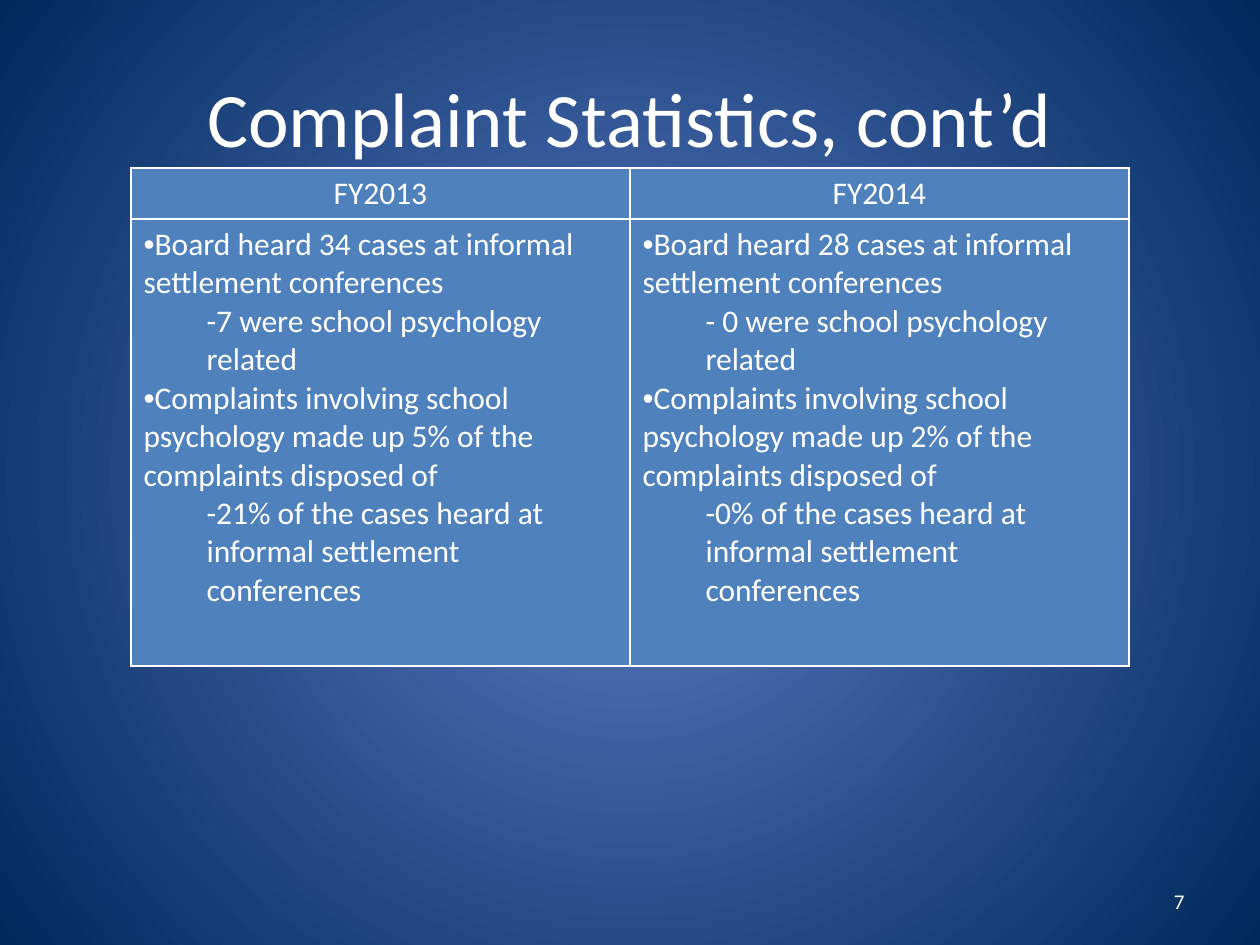
from lxml.etree import SubElement
from pptx import Presentation
from pptx.dml.color import RGBColor
from pptx.enum.text import MSO_ANCHOR as Anchor, PP_ALIGN as Align
from pptx.oxml.ns import qn
from pptx.util import Pt

EMU_PER_PX = 914400 / 126
FONT = "Calibri"
COLORS = {"text": "FFFFFF", "cell": "4F81BD", "center": "5E7CC5", "edge": "00295C"}

# (fiscal year, [(indent level, text), ...])
YEARS = [
    ("FY2013", [
        (0, "Board heard 34 cases at informal settlement conferences"),
        (1, "-7 were school psychology related"),
        (0, "Complaints involving school psychology made up 5% of the complaints disposed of"),
        (1, "-21% of the cases heard at informal settlement conferences"),
    ]),
    ("FY2014", [
        (0, "Board heard 28 cases at informal settlement conferences"),
        (1, "- 0 were school psychology related"),
        (0, "Complaints involving school psychology made up 2% of the complaints disposed of"),
        (1, "-0% of the cases heard at informal settlement conferences"),
    ]),
]


def px(value):
    return round(value * EMU_PER_PX)


def color(name):
    return RGBColor.from_string(COLORS[name])


class SlideBuilder:
    def __init__(self, slide):
        self.slide = slide

    def background(self):
        fill = self.slide.background.fill
        fill.gradient()
        for stop, name in zip(fill.gradient_stops, ("center", "edge")):
            stop.color.rgb = color(name)
        # Turn the linear gradient into a circular one
        gradient = self.slide._element.find(".//" + qn("a:gradFill"))
        gradient.remove(gradient.find(qn("a:lin")))
        circle = SubElement(gradient, qn("a:path"))
        circle.set("path", "circle")
        center = SubElement(circle, qn("a:fillToRect"))
        for side in "ltrb":
            center.set(side, "50000")

    def format(self, paragraph, size, align):
        paragraph.alignment = align
        for run in paragraph.runs:
            run.font.name = FONT
            run.font.size = Pt(size)
            run.font.color.rgb = color("text")

    def place_text(self, shape, text, box, size, align):
        shape.left, shape.top, shape.width, shape.height = map(px, box)
        frame = shape.text_frame
        frame.text = text
        frame.word_wrap = True
        frame.vertical_anchor = Anchor.MIDDLE
        self.format(frame.paragraphs[0], size, align)

    def title(self, text, box):
        self.place_text(self.slide.shapes.title, text, box, 44, Align.CENTER)

    def page_number(self, text, box):
        shape = self.slide.shapes.add_textbox(0, 0, 0, 0)
        self.place_text(shape, text, box, 12, Align.RIGHT)

    def style_cell(self, cell):
        properties = cell._tc.get_or_add_tcPr()
        for side in "LRTB":
            line = SubElement(properties, qn(f"a:ln{side}"), w=str(Pt(1)))
            solid = SubElement(line, qn("a:solidFill"))
            SubElement(solid, qn("a:srgbClr"), val=COLORS["text"])
        cell.fill.solid()
        cell.fill.fore_color.rgb = color("cell")

    def fill_list(self, frame, items):
        frame.text = "\n".join(text for _, text in items)
        for paragraph, (level, _) in zip(frame.paragraphs, items):
            paragraph.level = level
            self.format(paragraph, 18, Align.LEFT)
            properties = paragraph._p.get_or_add_pPr()
            properties.set("marL", str(px(63 * level)))
            properties.set("indent", "0")
            if level == 0:
                SubElement(properties, qn("a:buFont"), typeface="Arial")
                SubElement(properties, qn("a:buChar"), char="•")

    def year_table(self, years, left, top, column_width, row_heights):
        frame = self.slide.shapes.add_table(
            len(row_heights), len(years), px(left), px(top),
            px(column_width * len(years)), px(sum(row_heights)))
        table = frame.table
        table.first_row = table.horz_banding = False
        for row, height in zip(table.rows, row_heights):
            row.height = px(height)
        for index, (year, items) in enumerate(years):
            table.columns[index].width = px(column_width)
            header, body = table.cell(0, index), table.cell(1, index)
            self.style_cell(header)
            self.style_cell(body)
            header.text_frame.text = year
            self.format(header.text_frame.paragraphs[0], 18, Align.CENTER)
            self.fill_list(body.text_frame, items)


def main():
    presentation = Presentation()
    presentation.slide_width, presentation.slide_height = px(1260), px(945)
    title_only = presentation.slide_layouts[5]
    builder = SlideBuilder(presentation.slides.add_slide(title_only))

    builder.background()
    builder.title("Complaint Statistics, cont’d", (63, 38, 1134, 157))
    builder.year_table(YEARS, 131, 168, 499, (51, 447))
    builder.page_number("7", (903, 876, 294, 50))

    presentation.save("out.pptx")


if __name__ == "__main__":
    main()
